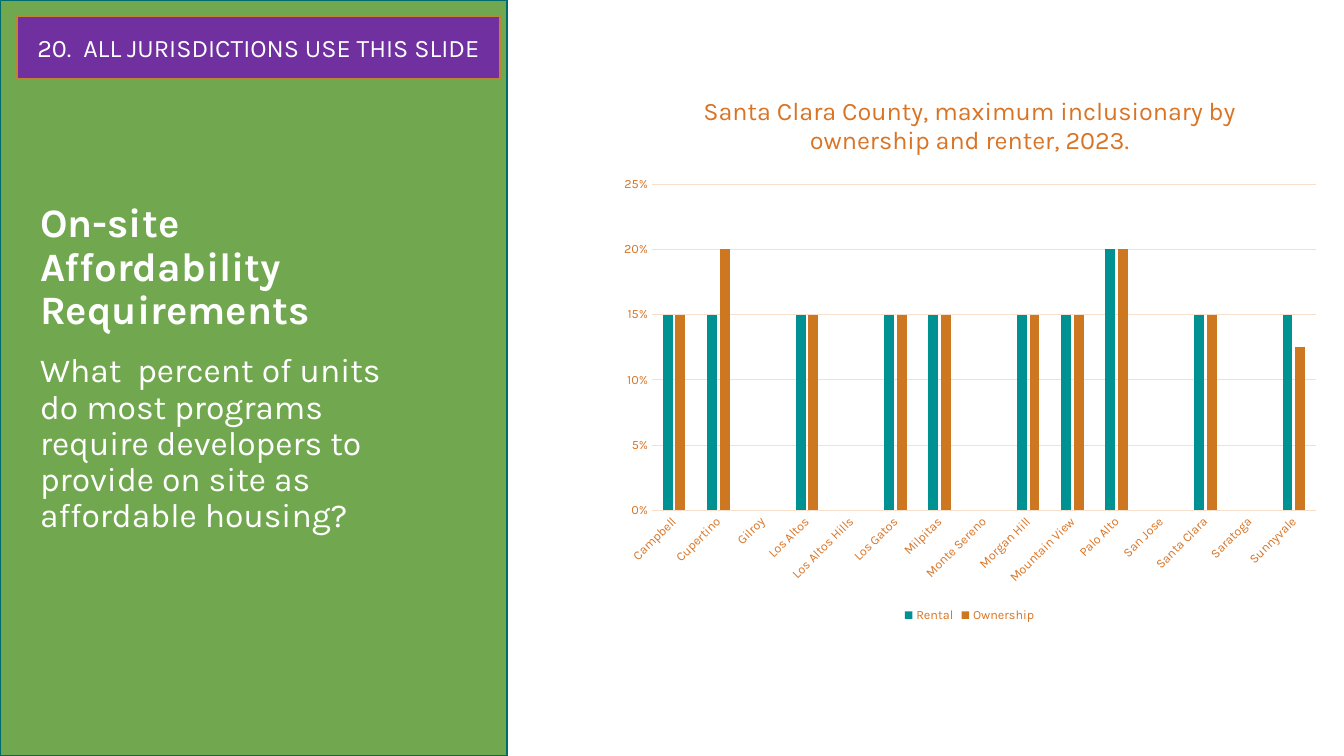
from lxml.etree import SubElement
from pptx import Presentation
from pptx.chart.data import CategoryChartData
from pptx.dml.color import RGBColor
from pptx.enum.chart import XL_CHART_TYPE, XL_LEGEND_POSITION, XL_TICK_MARK
from pptx.enum.shapes import MSO_SHAPE
from pptx.enum.text import MSO_ANCHOR, PP_ALIGN
from pptx.oxml.ns import qn
from pptx.util import Cm, Pt

FONT = "Karla"
WHITE, ORANGE, PALE_ORANGE = "FFFFFF", "D97425", "F6DFCD"

# Highest share per city in percent: rental, ownership
REQUIREMENTS = {
    "Campbell": (15, 15),
    "Cupertino": (15, 20),
    "Gilroy": (None, None),
    "Los Altos": (15, 15),
    "Los Altos Hills": (None, None),
    "Los Gatos": (15, 15),
    "Milpitas": (15, 15),
    "Monte Sereno": (None, None),
    "Morgan Hill": (15, 15),
    "Mountain View": (15, 15),
    "Palo Alto": (20, 20),
    "San Jose": (None, None),
    "Santa Clara": (15, 15),
    "Saratoga": (None, None),
    "Sunnyvale": (15, 12.5),
}
SERIES_COLORS = {"Rental": "009192", "Ownership": "CD7820"}


def color(hex_string):
    return RGBColor.from_string(hex_string)


def set_format(target, values):
    for name, value in values.items():
        setattr(target, name, value)


def style_font(font, size, hex_string, bold=False):
    set_format(font, {"name": FONT, "size": Pt(size), "bold": bold})
    font.color.rgb = color(hex_string)


def style_line(line, hex_string, width):
    line.color.rgb = color(hex_string)
    line.width = Pt(width)


def write_text(shape, text, size, frame_format, paragraph_format, bold=False):
    frame = shape.text_frame
    set_format(frame, {"word_wrap": True, **frame_format})
    paragraph = frame.paragraphs[0]
    set_format(paragraph, paragraph_format)
    run = paragraph.add_run()
    run.text = text
    style_font(run.font, size, WHITE, bold)


def add_rectangle(slide, box, fill, outline):
    shape = slide.shapes.add_shape(MSO_SHAPE.RECTANGLE, *map(Cm, box))
    shape.shadow.inherit = False
    shape.fill.solid()
    shape.fill.fore_color.rgb = color(fill)
    style_line(shape.line, outline, 1)
    return shape


def add_text(slide, box, *text_settings):
    write_text(slide.shapes.add_textbox(*map(Cm, box)), *text_settings)


def style_axis(axis):
    set_format(axis, {"major_tick_mark": XL_TICK_MARK.NONE,
                      "minor_tick_mark": XL_TICK_MARK.NONE})
    style_font(axis.tick_labels.font, 9, ORANGE)


def place_plot(chart, x, y, w, h):
    """Fix the inner plot area as fractions of the chart."""
    plot_area = chart._chartSpace.chart.plotArea
    for old_layout in plot_area.findall(qn("c:layout")):
        plot_area.remove(old_layout)
    layout = SubElement(plot_area, qn("c:layout"))
    plot_area.insert(0, layout)
    manual = SubElement(layout, qn("c:manualLayout"))
    settings = {"layoutTarget": "inner", "xMode": "edge", "yMode": "edge",
                "x": x, "y": y, "w": w, "h": h}
    for name, value in settings.items():
        SubElement(manual, qn(f"c:{name}")).set("val", str(value))


def add_requirements_chart(slide, box):
    data = CategoryChartData(number_format="0%")
    data.categories = list(REQUIREMENTS)
    for name, shares in zip(SERIES_COLORS, zip(*REQUIREMENTS.values())):
        data.add_series(name, [None if share is None else share / 100
                               for share in shares])
    chart = slide.shapes.add_chart(
        XL_CHART_TYPE.COLUMN_CLUSTERED, *map(Cm, box), data).chart
    style_font(chart.font, 10, "633511")

    # Title and legend
    title = chart.chart_title.text_frame
    title.text = ("Santa Clara County, maximum inclusionary by "
                  "ownership and renter, 2023.")
    style_font(title.paragraphs[0].runs[0].font, 18, ORANGE)
    chart.has_legend = True
    set_format(chart.legend, {"position": XL_LEGEND_POSITION.BOTTOM,
                              "include_in_layout": False})
    style_font(chart.legend.font, 9, ORANGE)

    # Columns
    plot = chart.plots[0]
    set_format(plot, {"gap_width": 219, "overlap": -27,
                      "vary_by_categories": False})
    for series in plot.series:
        series.format.fill.solid()
        series.format.fill.fore_color.rgb = color(SERIES_COLORS[series.name])

    # Axes
    cities, shares = chart.category_axis, chart.value_axis
    style_axis(cities)
    style_axis(shares)
    style_line(cities.format.line, PALE_ORANGE, 0.75)
    cities._element.txPr.find(qn("a:bodyPr")).set("rot", "-2700000")
    set_format(shares, {"minimum_scale": 0, "maximum_scale": 0.25,
                        "major_unit": 0.05, "has_major_gridlines": True})
    set_format(shares.tick_labels, {"number_format": "0%",
                                    "number_format_is_linked": False})
    shares.format.line.fill.background()
    style_line(shares.major_gridlines.format.line, PALE_ORANGE, 0.75)
    place_plot(chart, 0.06, 0.2, 0.92, 0.59)


def main():
    presentation = Presentation()
    set_format(presentation, {"slide_width": Cm(33.87),
                              "slide_height": Cm(19.05)})
    slide = presentation.slides.add_slide(presentation.slide_layouts[6])

    # Side panel with heading and question
    add_rectangle(slide, (0, 0, 12.78, 19.05), "71A84F", "006B6C")
    add_text(slide, (0.76, 5.28, 9.09, 3.25),
             "On-site Affordability Requirements", 28.8,
             {"vertical_anchor": MSO_ANCHOR.BOTTOM},
             {"line_spacing": 0.9}, True)
    add_text(slide, (0.76, 8.79, 9.09, 6.25),
             "What  percent of units do most programs require developers "
             "to provide on site as affordable housing?", 24,
             {"vertical_anchor": MSO_ANCHOR.TOP},
             {"line_spacing": 0.9, "space_before": Pt(10)})

    # Banner
    banner = add_rectangle(slide, (0.43, 0.41, 12.17, 1.57),
                           "7030A0", "BC8534")
    write_text(banner, "20.  ALL JURISDICTIONS USE THIS SLIDE", 18,
               {"vertical_anchor": MSO_ANCHOR.MIDDLE},
               {"alignment": PP_ALIGN.CENTER})

    # Chart
    add_requirements_chart(slide, (15.34, 1.85, 18.19, 13.94))
    presentation.save("out.pptx")


if __name__ == "__main__":
    main()
